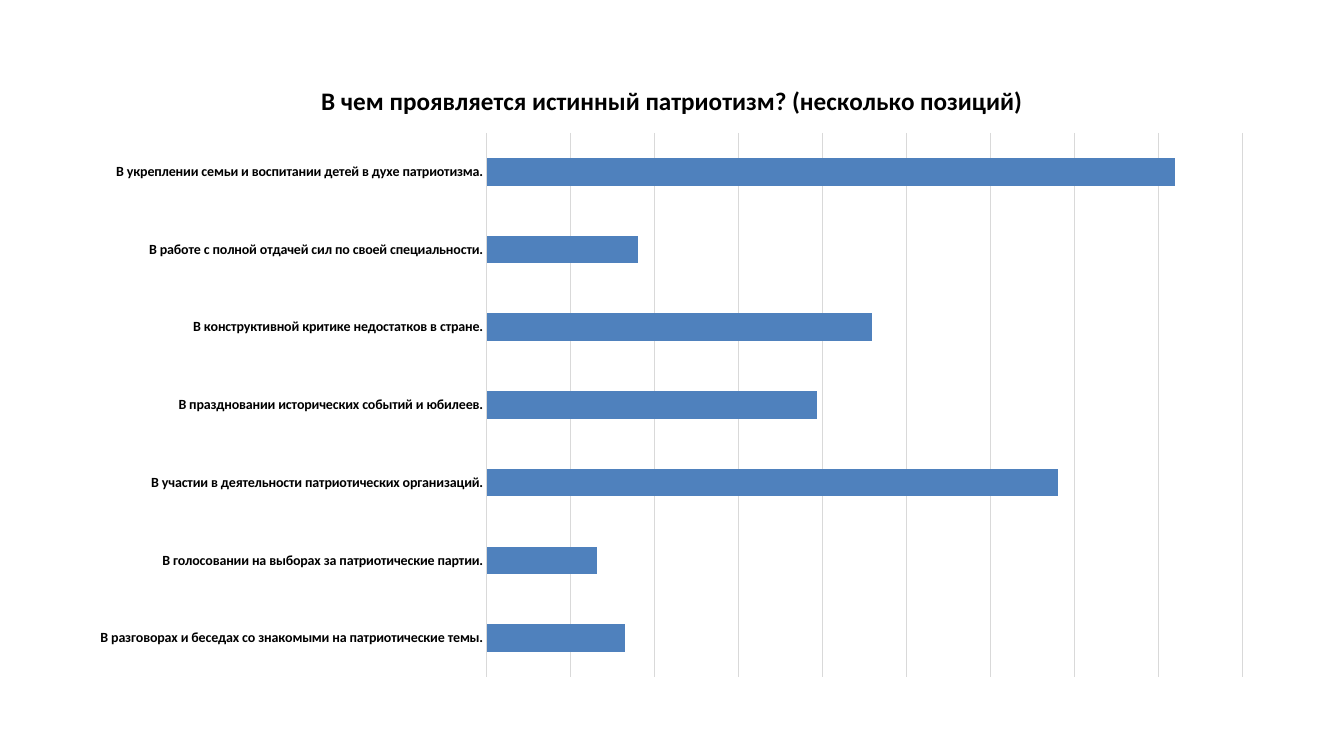
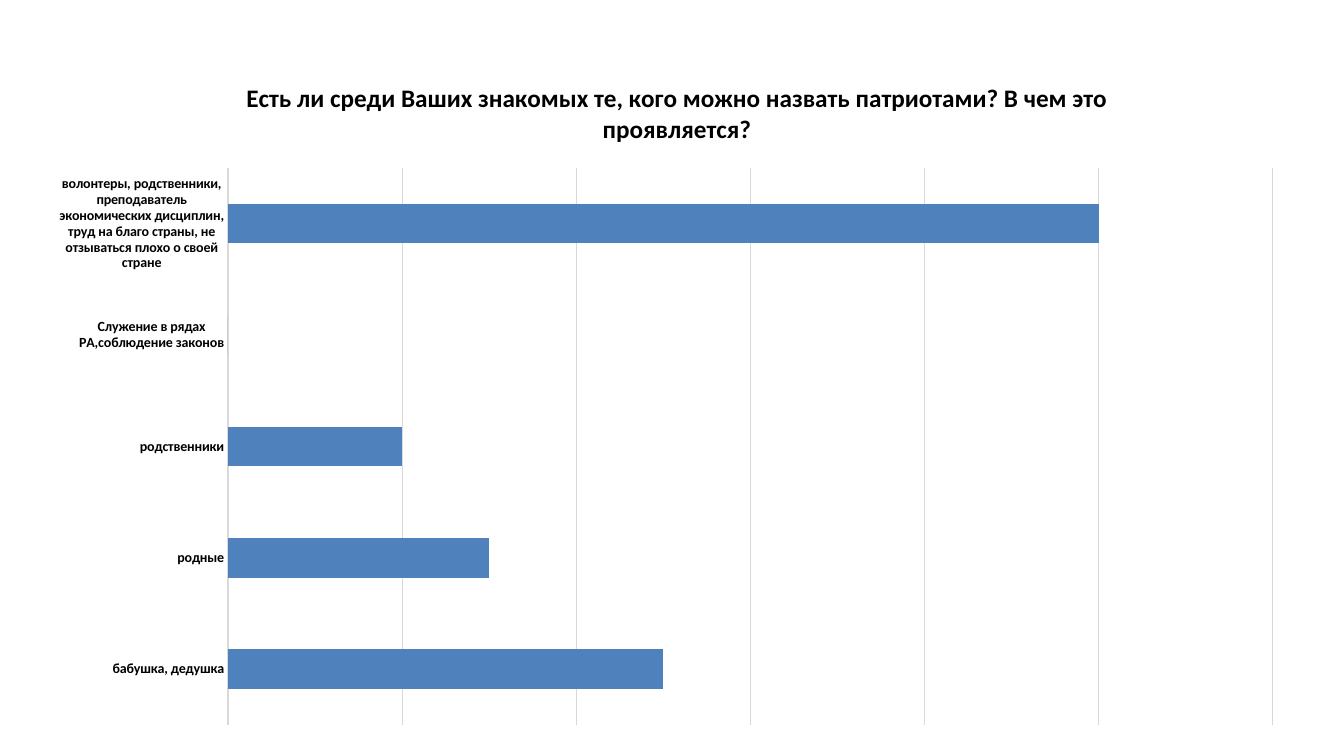
from dataclasses import dataclass

from lxml import etree
from pptx import Presentation
from pptx import util as u
from pptx.chart.axis import CategoryAxis, ValueAxis
from pptx.chart.chart import Chart
from pptx.chart.data import CategoryChartData
from pptx.dml.color import RGBColor
from pptx.enum import chart as charts
from pptx.oxml import ns
from pptx.slide import Slide

EMU_PER_PX = 914400 / 100.8
SLIDE_WIDTH, SLIDE_HEIGHT = 1344, 756
BLANK_LAYOUT = 6


@dataclass(frozen=True)
class Theme:
    font: str = "Calibri"
    text: RGBColor = RGBColor(0x00, 0x00, 0x00)
    grid: RGBColor = RGBColor(0xD9, 0xD9, 0xD9)
    bar: RGBColor = RGBColor(0x4F, 0x81, 0xBD)
    title_size: int = 18
    label_size: int = 10
    line_width: float = 0.75
    gap_width: int = 182


@dataclass(frozen=True)
class Box:
    left: int
    top: int
    width: int
    height: int


@dataclass(frozen=True)
class Question:
    title: str
    frame: Box
    plot: Box
    scale_max: float
    scale_step: float
    answers: dict[str, int]


THEME = Theme()

# Survey questions, answers listed from the bottom bar up
QUESTIONS = [
    Question(
        title="В чем проявляется истинный патриотизм? (несколько позиций)",
        frame=Box(78, 61, 1188, 628),
        plot=Box(487, 133, 756, 544),
        scale_max=109.8,
        scale_step=12.2,
        answers={
            "В разговорах и беседах со знакомыми на патриотические темы.": 20,
            "В голосовании на выборах за патриотические партии.": 16,
            "В участии в деятельности патриотических организаций.": 83,
            "В праздновании исторических событий и юбилеев.": 48,
            "В конструктивной критике недостатков в стране.": 56,
            "В работе с полной отдачей сил по своей специальности.": 22,
            "В укреплении семьи и воспитании детей в духе патриотизма.": 100,
        },
    ),
    Question(
        title="Есть ли среди Ваших знакомых те, кого можно назвать патриотами? "
              "В чем это проявляется?",
        frame=Box(55, 57, 1244, 681),
        plot=Box(228, 168, 1045, 557),
        scale_max=120,
        scale_step=20,
        answers={
            "бабушка, дедушка": 50,
            "родные": 30,
            "родственники": 20,
            "Служение в рядах РА,соблюдение законов": 0,
            "волонтеры, родственники, преподаватель экономических дисциплин, "
            "труд на благо страны, не отзываться плохо о своей стране": 100,
        },
    ),
]


def px(length: int) -> u.Emu:
    return u.Emu(round(length * EMU_PER_PX))


def set_all(target: object, values: dict[str, object]) -> None:
    for name, value in values.items():
        setattr(target, name, value)


def style_font(font, size: int, bold: bool) -> None:
    set_all(font, {"name": THEME.font, "size": u.Pt(size), "bold": bold})
    font.color.rgb = THEME.text


def style_line(line) -> None:
    line.color.rgb = THEME.grid
    line.width = u.Pt(THEME.line_width)


def place_plot(chart: Chart, frame: Box, plot: Box) -> None:
    """Fix the inner plot area as fractions of the chart frame."""
    area = chart._chartSpace.find(".//" + ns.qn("c:plotArea"))
    for old in area.findall(ns.qn("c:layout")):
        area.remove(old)
    layout = etree.Element(ns.qn("c:layout"))
    area.insert(0, layout)
    manual = etree.SubElement(layout, ns.qn("c:manualLayout"))
    settings = {
        "layoutTarget": "inner",
        "xMode": "edge",
        "yMode": "edge",
        "x": (plot.left - frame.left) / frame.width,
        "y": (plot.top - frame.top) / frame.height,
        "w": plot.width / frame.width,
        "h": plot.height / frame.height,
    }
    for tag, value in settings.items():
        etree.SubElement(manual, ns.qn(f"c:{tag}"), val=str(value))


def add_title(chart: Chart, title: str) -> None:
    chart.has_title = True
    chart.chart_title.include_in_layout = False
    heading = chart.chart_title.text_frame.paragraphs[0].add_run()
    heading.text = title
    style_font(heading.font, THEME.title_size, True)


def style_answer_axis(axis: CategoryAxis) -> None:
    set_all(axis, {
        "major_tick_mark": charts.XL_TICK_MARK.NONE,
        "minor_tick_mark": charts.XL_TICK_MARK.NONE,
        "has_major_gridlines": False,
    })
    style_font(axis.tick_labels.font, THEME.label_size, True)
    style_line(axis.format.line)


def style_scale_axis(axis: ValueAxis, question: Question) -> None:
    set_all(axis, {
        "visible": False,
        "has_major_gridlines": True,
        "minimum_scale": 0,
        "maximum_scale": question.scale_max,
        "major_unit": question.scale_step,
    })
    style_line(axis.major_gridlines.format.line)


def add_question_chart(slide: Slide, question: Question) -> None:
    results = CategoryChartData()
    results.categories = list(question.answers)
    results.add_series("Series 1", list(question.answers.values()))
    frame = question.frame
    chart = slide.shapes.add_chart(
        charts.XL_CHART_TYPE.BAR_CLUSTERED,
        px(frame.left), px(frame.top), px(frame.width), px(frame.height),
        results,
    ).chart
    chart.has_legend = False
    style_font(chart.font, THEME.label_size, False)
    add_title(chart, question.title)
    style_answer_axis(chart.category_axis)
    style_scale_axis(chart.value_axis, question)
    place_plot(chart, frame, question.plot)

    # Bars
    bars = chart.plots[0]
    set_all(bars, {"gap_width": THEME.gap_width, "vary_by_categories": False})
    fill = bars.series[0].format.fill
    fill.solid()
    fill.fore_color.rgb = THEME.bar


def main() -> None:
    deck = Presentation()
    set_all(deck, {"slide_width": px(SLIDE_WIDTH), "slide_height": px(SLIDE_HEIGHT)})
    for question in QUESTIONS:
        slide = deck.slides.add_slide(deck.slide_layouts[BLANK_LAYOUT])
        add_question_chart(slide, question)
    deck.save("out.pptx")


if __name__ == "__main__":
    main()
